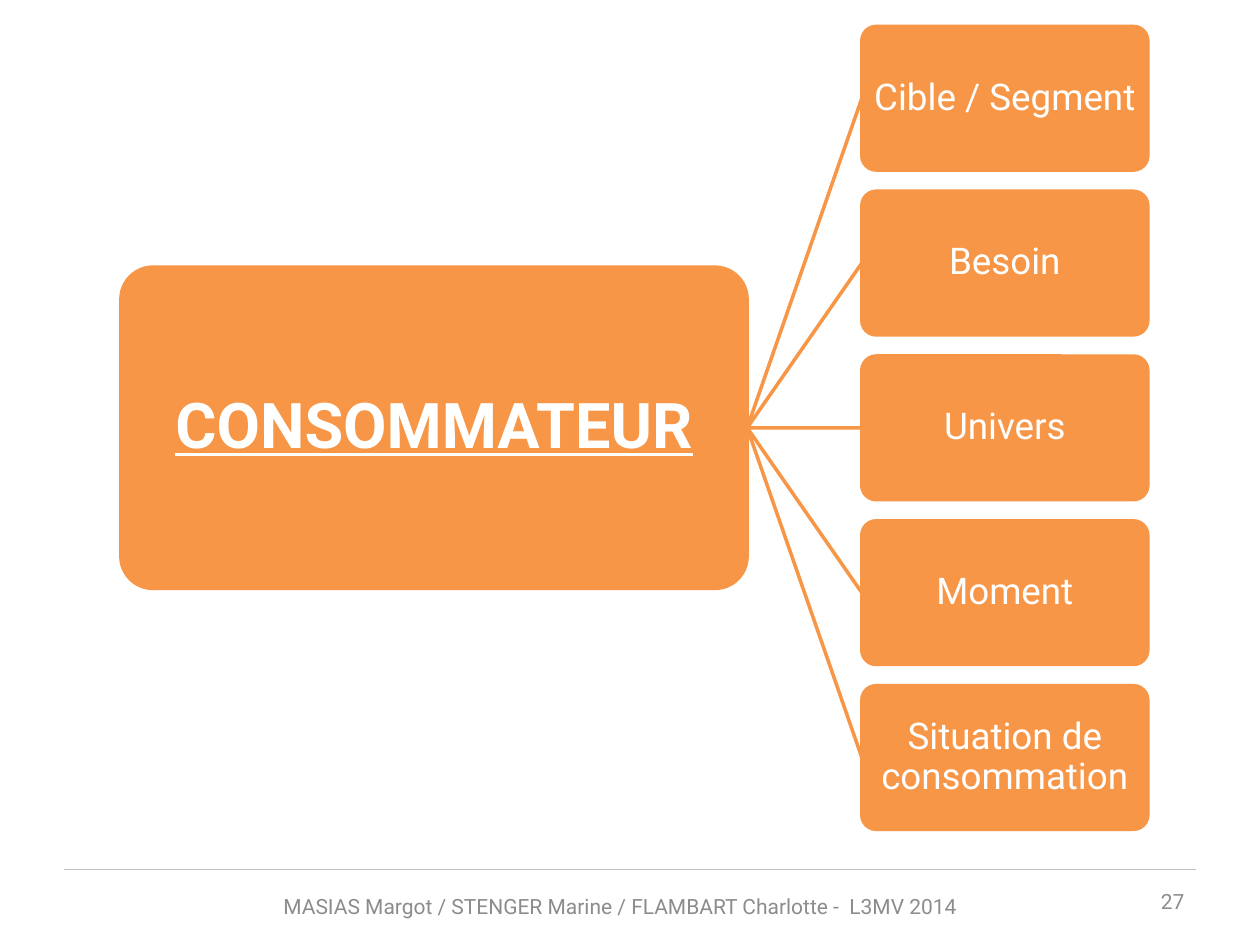
from pptx import Presentation
from pptx.dml.color import RGBColor
from pptx.enum.shapes import MSO_CONNECTOR, MSO_SHAPE
from pptx.enum.text import MSO_ANCHOR, PP_ALIGN
from pptx.oxml.ns import qn
from pptx.util import Inches, Pt

ORANGE = RGBColor(0xF7, 0x96, 0x46)
WHITE = RGBColor(0xFF, 0xFF, 0xFF)
GREY = RGBColor(0x8C, 0x8C, 0x8C)
RULE_GREY = RGBColor(0xBF, 0xBF, 0xBF)
FONT = "Roboto"
ROUNDED = MSO_SHAPE.ROUNDED_RECTANGLE
STRAIGHT = MSO_CONNECTOR.STRAIGHT
MIDDLE = MSO_ANCHOR.MIDDLE
CENTER, RIGHT = PP_ALIGN.CENTER, PP_ALIGN.RIGHT
LEFT_SIDE, RIGHT_SIDE = 1, 3

TOPICS = ["Cible / Segment", "Besoin", "Univers", "Moment",
          "Situation de consommation"]
TOPIC_LEFT, TOPIC_TOP = 6.84, 0.21
TOPIC_WIDTH, TOPIC_HEIGHT = 2.27, 1.14
TOPIC_PITCH = 1.308


def write(shape, text, size, color, align, inset=None):
    tf = shape.text_frame
    tf.word_wrap = True
    tf.vertical_anchor = MIDDLE
    if inset is not None:
        tf.margin_left = tf.margin_right = Inches(inset)
        tf.margin_top = tf.margin_bottom = Inches(inset)
    p = tf.paragraphs[0]
    p.text = text
    p.alignment = align
    p.font.name = FONT
    p.font.size = Pt(size)
    p.font.color.rgb = color
    return p


def add_box(s, text, left, top, width, height, size, inset):
    box = s.shapes.add_shape(ROUNDED, Inches(left), Inches(top),
                             Inches(width), Inches(height))
    box.adjustments[0] = 0.1
    box.shadow.inherit = False
    box.fill.solid()
    box.fill.fore_color.rgb = ORANGE
    box.line.color.rgb = ORANGE
    box.line.width = Pt(2)
    p = write(box, text, size, WHITE, CENTER, inset)
    p.line_spacing = 0.9
    return box


def add_line(s, color, width, start=(0, 0), end=(0, 0)):
    line = s.shapes.add_connector(STRAIGHT, *map(Inches, start + end))
    line.line.color.rgb = color
    line.line.width = Pt(width)
    sp_pr = line._element.spPr
    sp_pr.append(sp_pr.makeelement(qn("a:effectLst"), {}))
    return line


def join(s, source, target):
    line = add_line(s, ORANGE, 2)
    line.begin_connect(source, RIGHT_SIDE)
    line.end_connect(target, LEFT_SIDE)


def add_label(s, text, left, top, width, height, align):
    label = s.shapes.add_textbox(Inches(left), Inches(top),
                                 Inches(width), Inches(height))
    write(label, text, 12, GREY, align)


def main():
    prs = Presentation()
    prs.slide_width, prs.slide_height = Inches(10), Inches(7.5)
    s = prs.slides.add_slide(prs.slide_layouts[6])

    # Footer rule and slide number
    add_line(s, RULE_GREY, 0.75, (0.51, 6.9), (9.49, 6.9))
    add_label(s, "27", 7.17, 6.95, 2.33, 0.4, RIGHT)

    # Central idea
    root = add_box(s, "CONSOMMATEUR", 0.96, 2.12, 4.97, 2.55, 36, 0.03)
    root_font = root.text_frame.paragraphs[0].font
    root_font.bold = root_font.underline = True

    # Topics, each joined to the central idea
    for row, topic in enumerate(TOPICS):
        box = add_box(s, topic, TOPIC_LEFT, TOPIC_TOP + row * TOPIC_PITCH,
                      TOPIC_WIDTH, TOPIC_HEIGHT, 21, 0.01)
        join(s, root, box)

    # Authors
    add_label(s, "MASIAS Margot / STENGER Marine / FLAMBART Charlotte -  L3MV 2014",
              1.54, 7.06, 6.77, 0.26, CENTER)

    prs.save("out.pptx")


if __name__ == "__main__":
    main()
